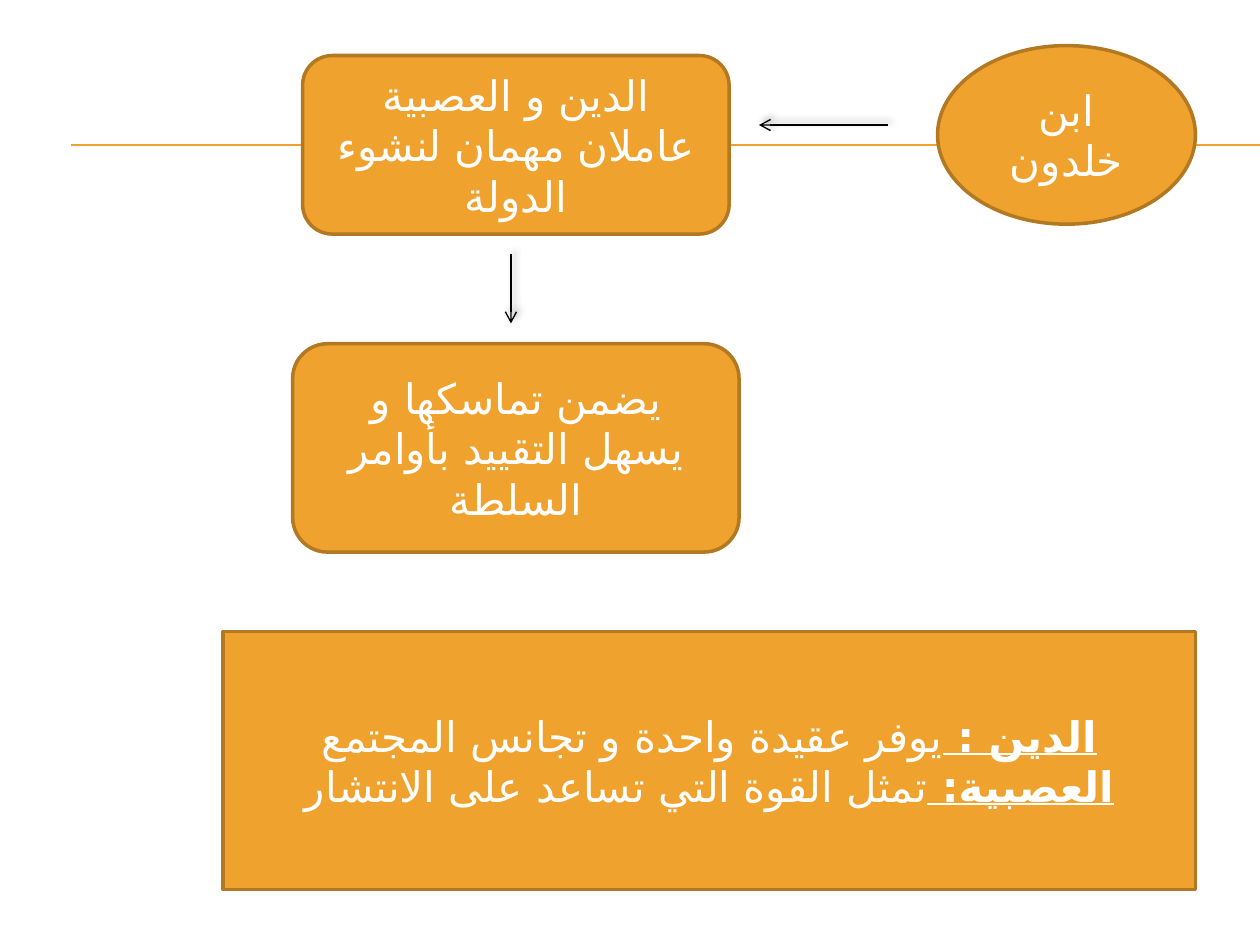
import pptx
import pptx.util
import pptx.dml.color
import pptx.enum.shapes
import pptx.enum.text
import pptx.oxml
import pptx.oxml.ns

Cm, Pt = pptx.util.Cm, pptx.util.Pt
Kind = pptx.enum.shapes.MSO_SHAPE
A = 'xmlns:a="http://schemas.openxmlformats.org/drawingml/2006/main"'

theme = {
    "fill": "F0A22E", "edge": "B27822", "text": "FFFFFF", "arrow": "000000",
    "font": "Karla", "arabic": "DejaVu Sans", "size": 24,
    "border": 2, "thin": 0.75, "stem": 0.79,
}


def write(para, text, bold=False, under=False):
    """Add a right-to-left run to a centred paragraph."""
    para.alignment = pptx.enum.text.PP_ALIGN.CENTER
    para._p.get_or_add_pPr().set("rtl", "1")
    run = para.add_run()
    run.text = text
    font = run.font
    font.name, font.size = theme["font"], Pt(theme["size"])
    font.bold, font.underline = bold, under
    font.color.rgb = pptx.dml.color.RGBColor.from_string(theme["text"])
    script = pptx.oxml.parse_xml(f'<a:cs {A} typeface="{theme["arabic"]}"/>')
    font._element.find(pptx.oxml.ns.qn("a:latin")).addnext(script)


def draw(ends, color, width, effect=""):
    """Add a straight line from x1, y1 to x2, y2."""
    line = slide.shapes.add_connector(
        pptx.enum.shapes.MSO_CONNECTOR.STRAIGHT, *[Cm(v) for v in ends])
    line.line.color.rgb = pptx.dml.color.RGBColor.from_string(color)
    line.line.width = Pt(width)
    line._element.spPr.append(
        pptx.oxml.parse_xml(f"<a:effectLst {A}>{effect}</a:effectLst>"))
    return line


deck = pptx.Presentation()
deck.slide_width, deck.slide_height = Cm(25.4), Cm(19.05)
slide = deck.slides.add_slide(deck.slide_layouts[6])

# Background rules
for y in (2.92, 2.93):
    draw((1.43, y, 25.4, y), theme["fill"], theme["thin"])

# Boxes: each paragraph is a list of (text, heading?)
boxes = [
    (Kind.OVAL, (18.9, 0.92, 5.2, 3.6), [[("ابن خلدون", False)]]),
    (Kind.ROUNDED_RECTANGLE, (6.1, 1.12, 8.6, 3.6),
     [[("الدين و العصبية عاملان مهمان لنشوء الدولة", False)]]),
    (Kind.ROUNDED_RECTANGLE, (5.9, 6.93, 9, 4.2),
     [[("يضمن تماسكها و يسهل التقييد بأوامر السلطة", False)]]),
    (Kind.RECTANGLE, (4.5, 12.73, 19.6, 5.2),
     [[("الدين : ", True), ("يوفر عقيدة واحدة و تجانس المجتمع", False)],
      [("العصبية: ", True), ("تمثل القوة التي تساعد على الانتشار", False)]]),
]
for kind, place, paras in boxes:
    box = slide.shapes.add_shape(kind, *[Cm(v) for v in place])
    box.shadow.inherit = False
    box.fill.solid()
    box.fill.fore_color.rgb = pptx.dml.color.RGBColor.from_string(theme["fill"])
    box.line.color.rgb = pptx.dml.color.RGBColor.from_string(theme["edge"])
    box.line.width = Pt(theme["border"])
    frame = box.text_frame
    frame.word_wrap = True
    frame.vertical_anchor = pptx.enum.text.MSO_ANCHOR.MIDDLE
    for i, runs in enumerate(paras):
        para = frame.add_paragraph() if i else frame.paragraphs[0]
        for text, head in runs:
            write(para, text, bold=head, under=head)

# Arrows with a soft shadow
shade = (f'<a:outerShdw blurRad="{Pt(4)}" dist="{Pt(3)}" dir="18900000" '
         f'rotWithShape="0"><a:srgbClr val="{theme["arrow"]}">'
         '<a:alpha val="40000"/></a:srgbClr></a:outerShdw>')
for ends in ((17.9, 2.52, 15.3, 2.52), (10.3, 5.12, 10.3, 6.52)):
    arrow = draw(ends, theme["arrow"], theme["stem"], effect=shade)
    arrow.line._get_or_add_ln().append(
        pptx.oxml.parse_xml(f'<a:tailEnd {A} type="arrow"/>'))

deck.save("out.pptx")
